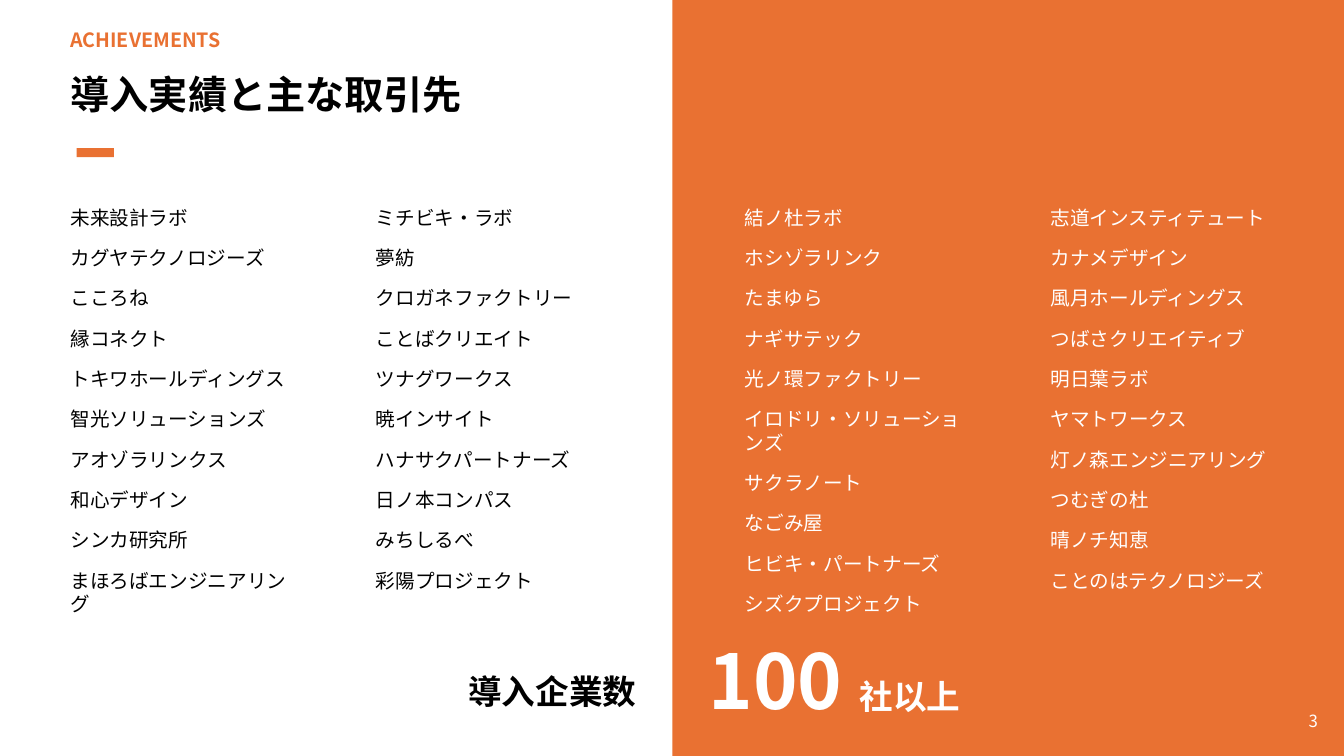
import pptx
import pptx.dml.color
import pptx.enum.shapes
import pptx.enum.text
import pptx.oxml
import pptx.oxml.ns
import pptx.util
from pptx.util import Inches

COLORS = {"accent": "E97132", "dark": "000000", "light": "FFFFFF"}
ALIGN = pptx.enum.text.PP_ALIGN
ANCHOR = pptx.enum.text.MSO_ANCHOR

CLIENT_COLUMNS = [
    ["未来設計ラボ", "カグヤテクノロジーズ", "こころね", "縁コネクト",
     "トキワホールディングス", "智光ソリューションズ", "アオゾラリンクス",
     "和心デザイン", "シンカ研究所", "まほろばエンジニアリング"],
    ["ミチビキ・ラボ", "夢紡", "クロガネファクトリー", "ことばクリエイト",
     "ツナグワークス", "暁インサイト", "ハナサクパートナーズ",
     "日ノ本コンパス", "みちしるべ", "彩陽プロジェクト"],
    ["結ノ杜ラボ", "ホシゾラリンク", "たまゆら", "ナギサテック",
     "光ノ環ファクトリー", "イロドリ・ソリューションズ", "サクラノート",
     "なごみ屋", "ヒビキ・パートナーズ", "シズクプロジェクト"],
    ["志道インスティテュート", "カナメデザイン", "風月ホールディングス",
     "つばさクリエイティブ", "明日葉ラボ", "ヤマトワークス",
     "灯ノ森エンジニアリング", "つむぎの杜", "晴ノチ知恵",
     "ことのはテクノロジーズ"],
]


class SlideBuilder:
    font_name = "Noto Sans CJK JP"

    def __init__(self, slide):
        self.slide = slide

    def style_span(self, span, size, color, bold=False):
        span.font.size = pptx.util.Pt(size)
        span.font.bold = bold
        span.font.color.rgb = pptx.dml.color.RGBColor.from_string(COLORS[color])
        span.font.name = self.font_name
        east_asian = pptx.oxml.parse_xml(
            f'<a:ea {pptx.oxml.ns.nsdecls("a")} typeface="{self.font_name}"/>')
        span.font._element.append(east_asian)

    def prepare_frame(self, box, anchor):
        frame = box.text_frame
        frame.word_wrap = True
        frame.auto_size = pptx.enum.text.MSO_AUTO_SIZE.NONE
        frame.vertical_anchor = anchor
        return frame

    def bar(self, left, top, width, height, color):
        shape = self.slide.shapes.add_shape(
            pptx.enum.shapes.MSO_SHAPE.RECTANGLE,
            Inches(left), Inches(top), Inches(width), Inches(height))
        shape.shadow.inherit = False
        shape.fill.solid()
        shape.fill.fore_color.rgb = pptx.dml.color.RGBColor.from_string(COLORS[color])
        shape.line.fill.background()

    def title(self, left, top, width, height, text, size, color):
        box = self.slide.shapes.title
        box.left, box.top = Inches(left), Inches(top)
        box.width, box.height = Inches(width), Inches(height)
        frame = self.prepare_frame(box, ANCHOR.MIDDLE)
        frame.text = text
        frame.paragraphs[0].alignment = ALIGN.LEFT
        self.style_span(frame.paragraphs[0].runs[0], size, color, bold=True)

    def line(self, left, top, width, height, spans, color, bold=True, align=ALIGN.LEFT):
        """One line of text; spans are (text, size) pairs."""
        box = self.slide.shapes.add_textbox(
            Inches(left), Inches(top), Inches(width), Inches(height))
        para = self.prepare_frame(box, ANCHOR.MIDDLE).paragraphs[0]
        para.alignment = align
        for text, size in spans:
            span = para.add_run()
            span.text = text
            self.style_span(span, size, color, bold)

    def name_list(self, left, top, width, height, names, color):
        box = self.slide.shapes.add_textbox(
            Inches(left), Inches(top), Inches(width), Inches(height))
        frame = self.prepare_frame(box, ANCHOR.TOP)
        frame.text = "\n".join(names)
        for index, para in enumerate(frame.paragraphs):
            para.line_spacing = pptx.util.Pt(16.8)
            if index:
                para.space_before = pptx.util.Pt(12)
            self.style_span(para.runs[0], 14, color)


def main():
    deck = pptx.Presentation()
    deck.slide_width, deck.slide_height = Inches(13.33), Inches(7.5)
    page = SlideBuilder(deck.slides.add_slide(deck.slide_layouts[5]))

    # Right half and page number
    page.bar(6.67, 0, 6.67, 7.5, "accent")
    page.line(12.68, 6.95, 0.49, 0.4, [("3", 12)], "light", bold=False, align=ALIGN.RIGHT)

    # Heading
    page.line(0.6, 0.23, 4.74, 0.33, [("ACHIEVEMENTS", 14)], "accent")
    page.title(0.6, 0.74, 4.74, 0.39, "導入実績と主な取引先", 28, "dark")
    page.bar(0.76, 1.47, 0.37, 0.09, "accent")

    # Client names: two columns on each half
    for index, names in enumerate(CLIENT_COLUMNS):
        half, column = divmod(index, 2)
        left = 0.6 + 6.69 * half + 3.03 * column
        page.name_list(left, 1.99, 2.41, 3.98, names, ("dark", "light")[half])

    # Number of client companies
    page.line(2.85, 6.66, 3.56, 0.39, [("導入企業数", 24)], "dark", align=ALIGN.RIGHT)
    page.line(6.93, 6.42, 3.56, 0.63, [("100 ", 54), ("社以上", 24)], "light")

    deck.save("out.pptx")


if __name__ == "__main__":
    main()
